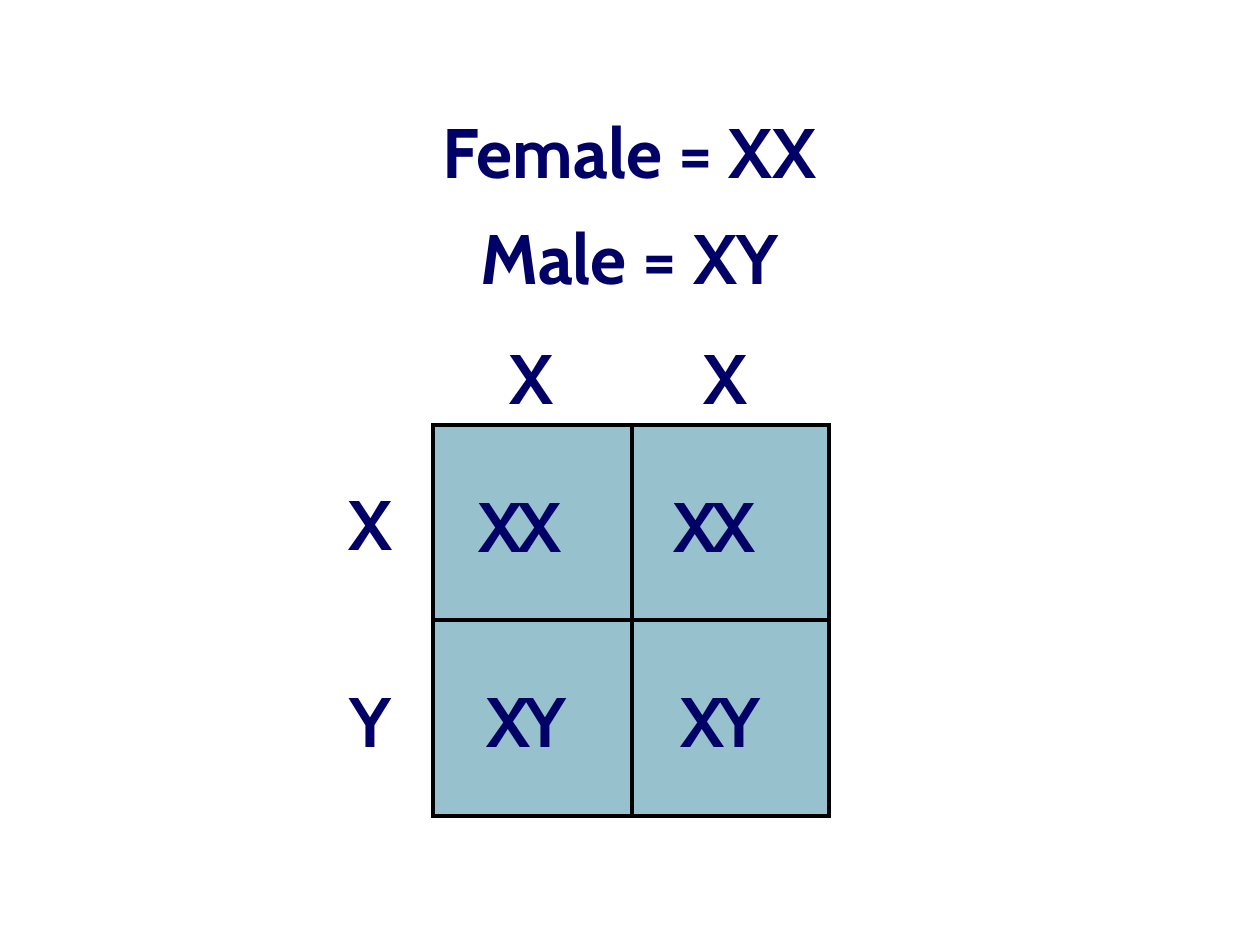
from lxml.etree import SubElement
from pptx import Presentation
from pptx.dml.color import RGBColor
from pptx.enum.shapes import MSO_CONNECTOR, MSO_SHAPE
from pptx.enum.text import MSO_ANCHOR, MSO_AUTO_SIZE, PP_ALIGN
from pptx.oxml.ns import qn
from pptx.util import Emu, Pt

COLORS = {"text": "000066", "fill": "31859C", "line": "000000"}
FONT = "Cabin"
PAD = 13
STEP = 39
GAP = 194


def px(n):
    return Emu(round(n * 914400 / 126))


def color(name):
    return RGBColor.from_string(COLORS[name])


def place(shape, left, top, width, height):
    shape.left, shape.top = px(left), px(top)
    shape.width, shape.height = px(width), px(height)


def style(frame, align):
    frame.word_wrap = True
    frame.auto_size = MSO_AUTO_SIZE.NONE
    frame.vertical_anchor = MSO_ANCHOR.TOP
    for para in frame.paragraphs:
        para.alignment = align
        for run in para.runs:
            run.font.name = FONT
            run.font.size = Pt(40)
            run.font.bold = True
            run.font.color.rgb = color("text")


def title(slide):
    shape = slide.shapes.title
    place(shape, 337, 115, 585, 199)
    frame = shape.text_frame
    frame.text = "Female = XX\nMale = XY"
    for para in frame.paragraphs:
        para.line_spacing = 0.85
    frame.paragraphs[1].space_before = Pt(20)
    style(frame, PP_ALIGN.CENTER)


def label(slide, text, left, top, width=GAP, align=PP_ALIGN.CENTER, shift=0):
    box = slide.shapes.add_textbox(px(left), px(top), px(width), px(97))
    frame = box.text_frame
    frame.margin_left = px(PAD + shift)
    frame.text = text
    style(frame, align)


def genes(slide, text, left, top, shift=0):
    for col in range(2):
        label(slide, text, left + col * GAP, top, GAP, PP_ALIGN.LEFT, shift)


def stroke(line):
    line.color.rgb = color("line")
    line.width = Pt(2.25)


def square(slide):
    shape = slide.shapes.add_shape(MSO_SHAPE.RECTANGLE, 0, 0, 0, 0)
    place(shape, 433, 425, 396, 391)
    shape.shadow.inherit = False
    shape.fill.solid()
    shape.fill.fore_color.rgb = color("fill")
    tint = shape.fill._xPr.find(qn("a:solidFill"))[0]
    SubElement(tint, qn("a:alpha"), val="50000")
    stroke(shape.line)
    edge = shape._element.spPr.find(qn("a:ln"))
    SubElement(edge, qn("a:miter"), lim="800000")


def rule(slide, *ends):
    link = slide.shapes.add_connector(MSO_CONNECTOR.STRAIGHT, *map(px, ends))
    stroke(link.line)
    SubElement(link._element.spPr, qn("a:effectLst"))


def main():
    deck = Presentation()
    deck.slide_width, deck.slide_height = px(1260), px(945)
    slide = deck.slides.add_slide(deck.slide_layouts[5])
    title(slide)
    square(slide)
    genes(slide, "X", 466, 476, STEP)
    genes(slide, "X", 474, 671)
    genes(slide, "Y", 473, 671, STEP)
    genes(slide, "X", 466, 476)
    rule(slide, 632, 425, 632, 818)
    rule(slide, 830, 620, 432, 620)
    for col in range(2):
        label(slide, "X", 434 + col * GAP, 328)
    for gene, top in (("Y", 671), ("X", 474)):
        label(slide, gene, 244, top, 252)
    deck.save("out.pptx")


if __name__ == "__main__":
    main()
